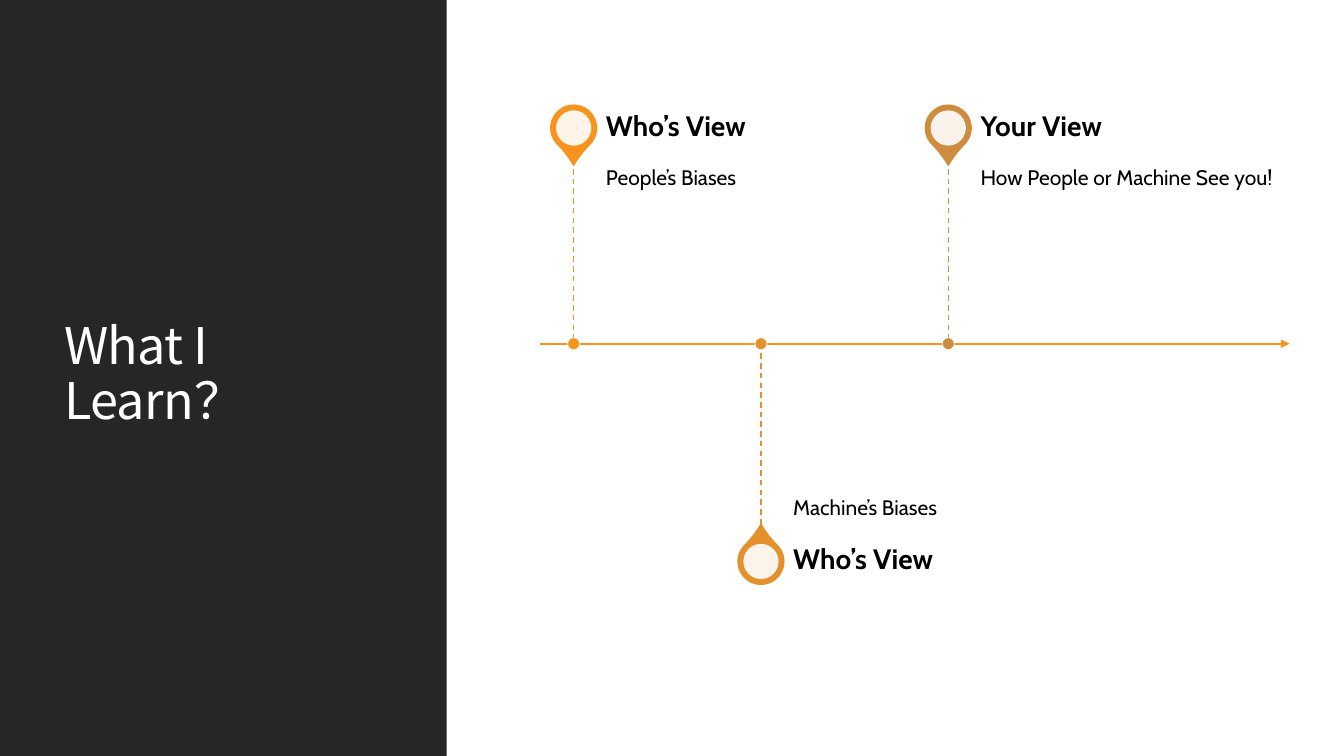
from lxml import etree
from pptx import Presentation
from pptx.dml.color import RGBColor
from pptx.enum.dml import MSO_LINE
from pptx.enum.shapes import MSO_CONNECTOR, MSO_SHAPE
from pptx.enum.text import MSO_ANCHOR, PP_ALIGN
from pptx.oxml.ns import qn
from pptx.util import Inches, Pt

RECT, OVAL, DROP = MSO_SHAPE.RECTANGLE, MSO_SHAPE.OVAL, MSO_SHAPE.TEAR
STRAIGHT, DASH = MSO_CONNECTOR.STRAIGHT, MSO_LINE.DASH
TOP, MIDDLE, BOTTOM = MSO_ANCHOR.TOP, MSO_ANCHOR.MIDDLE, MSO_ANCHOR.BOTTOM
LEFT = PP_ALIGN.LEFT

WIDE, HIGH = 13.33, 7.5
COLORS = {"dark": "262626", "white": "FFFFFF", "black": "000000",
          "orange": "F8931D", "amber": "E3902D", "bronze": "CE8D3E"}
HEAD_FONT, BODY_FONT = "Noto Sans CJK TC", "Cabin"
PANEL = (0, 0, 4.43, HIGH)
TIMELINE = (5.36, 0.94, 7.43, 4.94)
STEPS = [("Who’s View", "People’s Biases", "orange"),
         ("Who’s View", "Machine’s Biases", "amber"),
         ("Your View", "How People or Machine See you!", "bronze")]


def rgb(name):
    return RGBColor.from_string(COLORS[name])


def add_form(slide, kind, box, fill, edge=None, weight=1):
    form = slide.shapes.add_shape(kind, *map(Inches, box))
    form.shadow.inherit = False
    form.fill.solid()
    form.fill.fore_color.rgb = rgb(fill)
    if edge:
        form.line.color.rgb = rgb(edge)
        form.line.width = Pt(weight)
    else:
        form.line.fill.background()
    return form


def add_disc(slide, x, y, size, fill, edge=None, weight=1):
    """Circle centred on x, y."""
    box = (x - size / 2, y - size / 2, size, size)
    return add_form(slide, OVAL, box, fill, edge, weight)


def add_rule(slide, start, end, color, weight):
    rule = slide.shapes.add_connector(STRAIGHT, *map(Inches, (*start, *end)))
    rule.line.color.rgb = rgb(color)
    rule.line.width = Pt(weight)
    etree.SubElement(rule._element.spPr, qn("a:effectLst"))
    return rule


def add_text(slide, box, text, font, size, color, anchor, pads):
    """Wrapped text; pads are left, top, right and bottom insets."""
    frame = slide.shapes.add_textbox(*map(Inches, box)).text_frame
    frame.word_wrap = True
    frame.vertical_anchor = anchor
    (frame.margin_left, frame.margin_top,
     frame.margin_right, frame.margin_bottom) = map(Inches, pads)
    frame.text = text
    para = frame.paragraphs[0]
    para.alignment = LEFT
    para.line_spacing = 0.9
    run = para.runs[0]
    run.font.name, run.font.size = font, Pt(size)
    run.font.color.rgb = rgb(color)
    return run


def draw_panel(slide, box):
    left, top, width, height = box
    add_form(slide, RECT, box, "dark")
    area = (left + 0.54, top + 0.57, 3.37, height - 1.19)
    run = add_text(slide, area, "What I Learn？", HEAD_FONT, 36, "white",
                   MIDDLE, (0.1, 0.05, 0.1, 0.05))
    props = run._r.get_or_add_rPr()
    props.set("spc", "-50")
    etree.SubElement(props, qn("a:ea")).set("typeface", HEAD_FONT)


def draw_pin(slide, x, y, color, angle):
    size = 0.45
    box = (x - size / 2, y - size / 2, size, size)
    drop = add_form(slide, DROP, box, color, color, 1.25)
    drop.adjustments[0] = 1.15
    drop.rotation = angle
    disc = add_disc(slide, x, y, 0.35, "white")
    tint = disc._element.spPr.find(".//" + qn("a:srgbClr"))
    etree.SubElement(tint, qn("a:alpha")).set("val", "90000")


def draw_step(slide, x, box, step, above):
    """Pin, texts, stem and dot of one step, above or below the axis."""
    top, height = box[1], box[3]
    title, body, color = step
    axis, band, wide = top + height / 2, 0.64, 3.08
    text = x + 0.32
    if above:
        head, pin, edge, start = top, top + 0.33, top + band, top + band
        anchor, pads, angle = TOP, (0, 0.1, 0.1, 0.16), 135
    else:
        edge = top + height - band
        head, pin, start = edge, edge + 0.33, axis
        anchor, pads, angle = BOTTOM, (0, 0.16, 0, 0.1), 315
    draw_pin(slide, x, pin, color, angle)
    area = (text, start, wide, height / 2 - band)
    add_text(slide, area, body, BODY_FONT, 15, "black", anchor, pads)
    area = (text, head, wide, band)
    run = add_text(slide, area, title, BODY_FONT, 20, "black", MIDDLE,
                   (0, 0, 0.14, 0))
    run.font.bold = True
    ends = sorted((edge, axis))
    stem = add_rule(slide, (x, ends[0]), (x, ends[1]), color, 1)
    stem.line.dash_style = DASH
    add_disc(slide, x, axis, 0.12, color, "white", 0.5)


def draw_timeline(slide, box):
    left, top, width, height = box
    axis = top + height / 2
    arrow = add_rule(slide, (left, axis), (left + width, axis), "orange", 1.5)
    line = arrow.line._get_or_add_ln()
    etree.SubElement(line, qn("a:tailEnd")).set("type", "triangle")
    for i, step in enumerate(STEPS):
        draw_step(slide, left + 0.33 + i * width / 4, box, step, i % 2 == 0)


def main():
    deck = Presentation()
    deck.slide_width, deck.slide_height = Inches(WIDE), Inches(HIGH)
    slide = deck.slides.add_slide(deck.slide_layouts[6])
    draw_panel(slide, PANEL)
    draw_timeline(slide, TIMELINE)
    deck.save("out.pptx")


if __name__ == "__main__":
    main()
